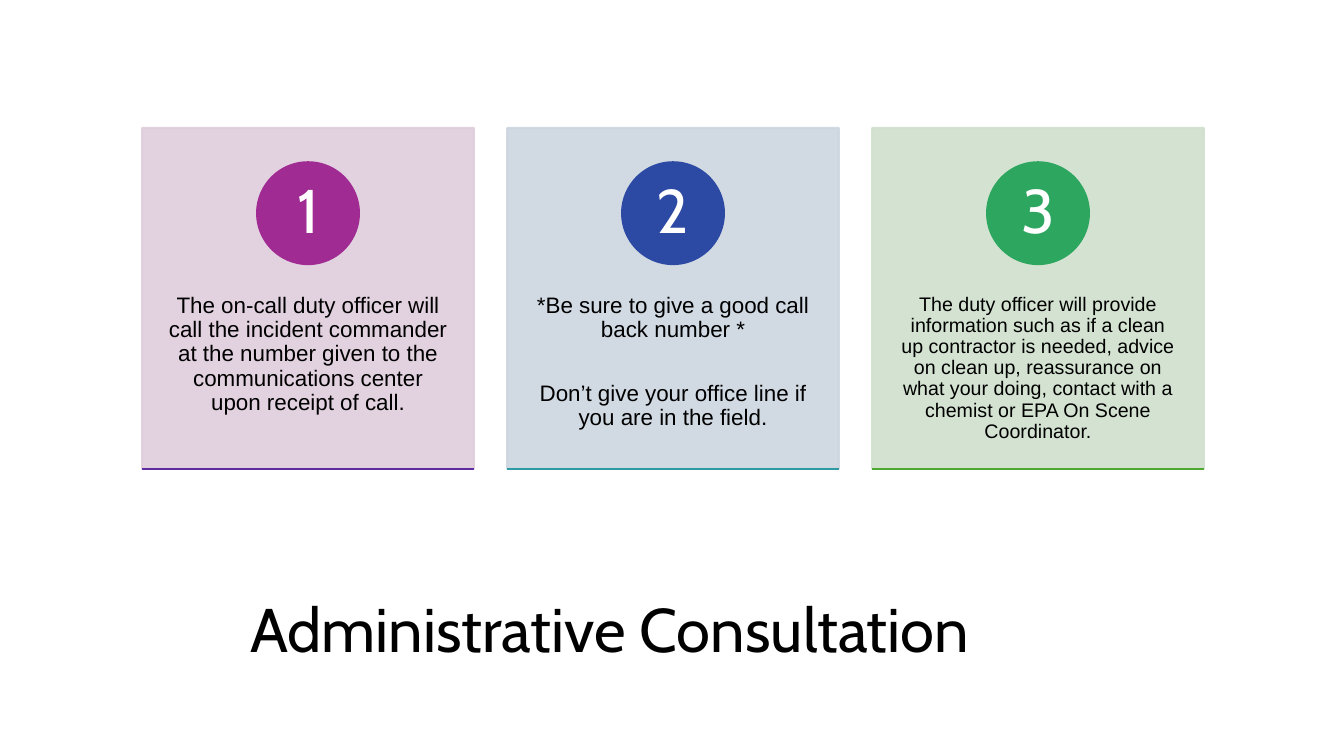
from dataclasses import dataclass

from lxml.etree import SubElement
from pptx import Presentation
from pptx.dml.color import RGBColor as Rgb
from pptx.enum.shapes import MSO_CONNECTOR as Link, MSO_SHAPE as Kind
from pptx.enum.text import MSO_ANCHOR as Anchor, PP_ALIGN as Align
from pptx.oxml.ns import qn
from pptx.util import Pt

PX = 9144  # EMU per px, 100 px to the inch


@dataclass(frozen=True)
class Theme:
    head: str = "Cabin"
    body: str = "Arial"
    ink: str = "000000"
    pale: str = "FFFFFF"
    big: int = 44
    text: int = 16
    small: int = 14
    rule: float = 1.5
    alpha: int = 90


def write(frame, *paras, font, size, color, anchor=Anchor.TOP, pad=(10, 5), after=0):
    """Fill a text frame with centred paragraphs; pad is (sides, top and bottom)."""
    frame.word_wrap = True
    frame.vertical_anchor = anchor
    frame.margin_left = frame.margin_right = pad[0] * PX
    frame.margin_top = frame.margin_bottom = pad[1] * PX
    for i, text in enumerate(paras):
        para = frame.add_paragraph() if i else frame.paragraphs[0]
        para.alignment = Align.CENTER
        para.line_spacing = 0.9
        para.space_before = Pt(0)
        para.space_after = Pt(after)
        run = para.add_run()
        run.text = text
        run.font.name = font
        run.font.size = Pt(size)
        run.font.color.rgb = Rgb.from_string(color)


class Deck:
    def __init__(self, theme, wide, high):
        self.theme = theme
        self.file = Presentation()
        self.file.slide_width, self.file.slide_height = wide * PX, high * PX
        self.slide = self.file.slides.add_slide(self.file.slide_layouts[5])
        self.shapes = self.slide.shapes

    def title(self, text, x, y, w, h):
        box = self.shapes.title
        box.left, box.top, box.width, box.height = (v * PX for v in (x, y, w, h))
        look = self.theme
        write(box.text_frame, text, font=look.head, size=look.big,
              color=look.ink, anchor=Anchor.MIDDLE)

    def shape(self, kind, x, y, w, h, color, alpha=100):
        item = self.shapes.add_shape(kind, *(v * PX for v in (x, y, w, h)))
        item.shadow.inherit = False
        item.line.width = Pt(self.theme.rule)
        for fill in (item.fill, item.line.fill):
            fill.solid()
            fill.fore_color.rgb = Rgb.from_string(color)
        if alpha < 100:
            for tone in item._element.spPr.iter(qn("a:srgbClr")):
                SubElement(tone, qn("a:alpha"), val=str(alpha * 1000))
        return item

    def badge(self, text, x, y, size, color):
        disc = self.shape(Kind.OVAL, x, y, size, size, color)
        look = self.theme
        write(disc.text_frame, text, font=look.head, size=look.big,
              color=look.pale, anchor=Anchor.MIDDLE, pad=(8, 1))

    def text(self, paras, x, y, w, h, size):
        box = self.shapes.add_textbox(*(v * PX for v in (x, y, w, h)))
        look = self.theme
        write(box.text_frame, *paras, font=look.body, size=size,
              color=look.ink, pad=(26, 36), after=28)

    def rule(self, x, y, w, color):
        line = self.shapes.add_connector(
            Link.STRAIGHT, x * PX, y * PX, (x + w) * PX, y * PX)
        line.line.width = Pt(self.theme.rule)
        line.line.color.rgb = Rgb.from_string(color)
        SubElement(line._element.spPr, qn("a:effectLst"))

    def card(self, num, x, y, w, h, tint, tone, edge, size, paras):
        disc = 101
        self.shape(Kind.RECTANGLE, x, y, w, h, tint, self.theme.alpha)
        self.text(paras, x, y + 129, w, 203, size)
        self.badge(str(num), x + (w - disc) // 2, y + 34, disc, tone)
        self.rule(x, y + h, w, edge)


def main():
    look = Theme()
    deck = Deck(look, 1333, 750)
    deck.title("Administrative Consultation", 126, 589, 958, 77)
    cards = [
        ("DFCDDC", "A02B93", "5F2CA1", look.text,
         ["The on-call duty officer will call the incident commander at the "
          "number given to the communications center upon receipt of call."]),
        ("CDD6E0", "2C49A3", "2D9AA4", look.text,
         ["*Be sure to give a good call back number *",
          "Don’t give your office line if you are in the field."]),
        ("D0E1CD", "2DA65F", "4EA72E", look.small,
         ["The duty officer will provide information such as if a clean up "
          "contractor is needed, advice on clean up, reassurance on what your "
          "doing, contact with a chemist or EPA On Scene Coordinator."]),
    ]
    wide, gap = 329, 33
    for i, card in enumerate(cards):
        deck.card(i + 1, 141 + i * (wide + gap), 127, wide, 338, *card)
    deck.file.save("out.pptx")


if __name__ == "__main__":
    main()
